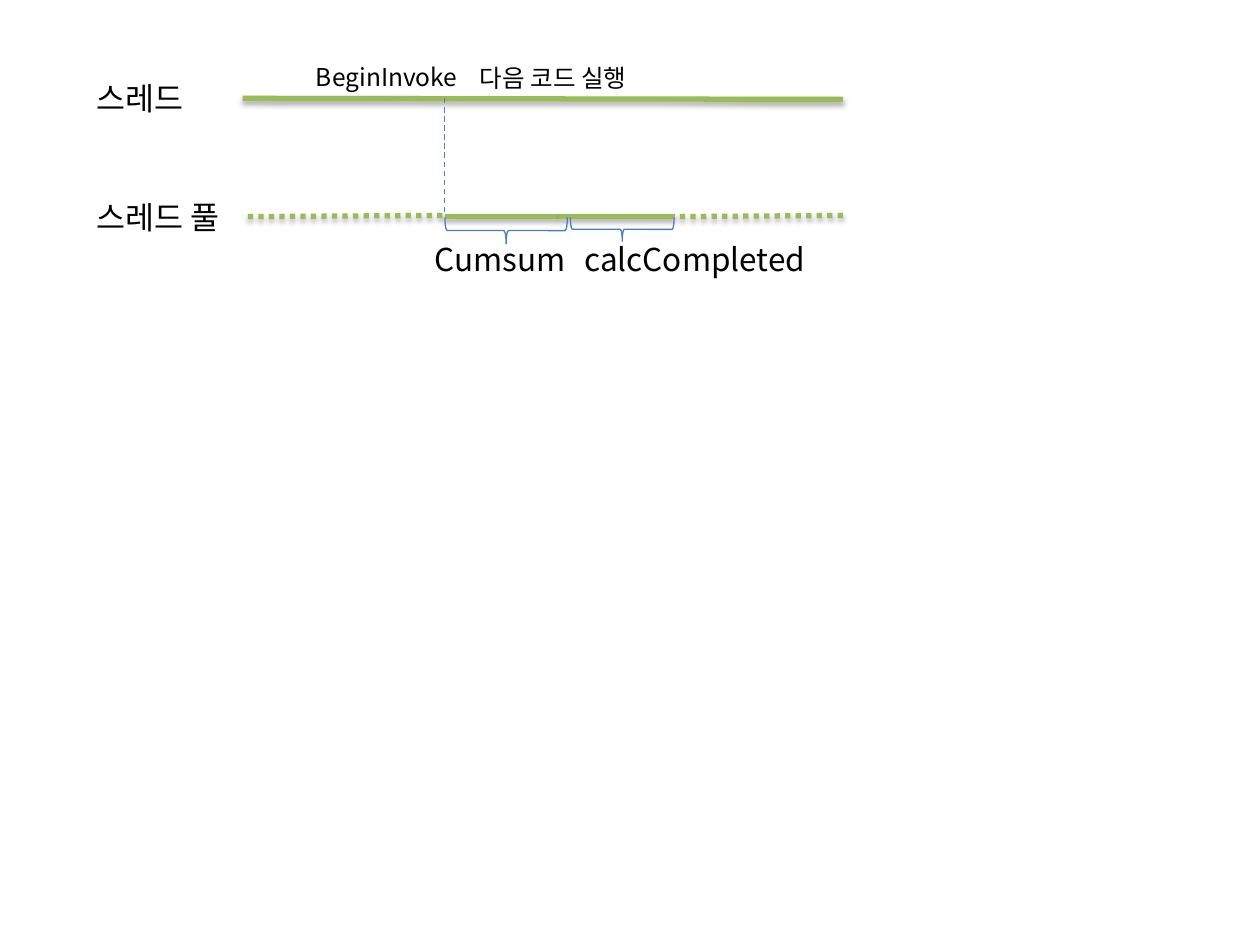
from lxml import etree
from pptx import Presentation
from pptx import util as u
from pptx.dml.color import RGBColor
from pptx.enum import dml, shapes, text
from pptx.oxml.ns import qn

Pt = u.Pt
FONT = "Noto Sans CJK KR"
COLORS = {"text": "000000", "thread": "9BBB59", "call": "4B7EBC", "shadow": "000000"}
SHADOW = {"blurRad": Pt(3.15), "dist": Pt(1.8), "dir": 90 * 60000, "rotWithShape": 0}

# Shared positions of the timeline
LEFT, CALL, SWITCH, DONE, RIGHT = 138.6, 254.2, 319.7, 385.9, 481.7
THREAD_Y, POOL_Y = 56.2, 123.8
LABEL_X = 48.2


def color(key):
    return RGBColor.from_string(COLORS[key])


def set_all(target, values):
    for name, value in values.items():
        setattr(target, name, value)


def add_label(slide, words, left, top, width, size):
    height = 29.1 if size == 18 else 24.2
    box = slide.shapes.add_textbox(Pt(left), Pt(top), Pt(width), Pt(height))
    frame = box.text_frame
    set_all(frame, {"word_wrap": True, "auto_size": text.MSO_AUTO_SIZE.SHAPE_TO_FIT_TEXT})
    run = frame.paragraphs[0].add_run()
    run.text = words
    set_all(run.font, {"size": Pt(size), "name": FONT})
    run.font.color.rgb = color("text")
    etree.SubElement(run.font._element, qn("a:ea"), typeface=FONT)


def add_line(slide, start, end, key, width, dash=None, shadow=False):
    line = slide.shapes.add_connector(
        shapes.MSO_CONNECTOR.STRAIGHT, *(Pt(v) for v in (*start, *end)))
    line.line.color.rgb = color(key)
    set_all(line.line, {"width": Pt(width), "dash_style": dash})
    effects = etree.SubElement(line._element.spPr, qn("a:effectLst"))
    if shadow:
        outer = etree.SubElement(effects, qn("a:outerShdw"),
                                 {name: str(int(value)) for name, value in SHADOW.items()})
        tint = etree.SubElement(outer, qn("a:srgbClr"), val=COLORS["shadow"])
        etree.SubElement(tint, qn("a:alpha"), val="35000")


def add_brace(slide, left, right, top, depth):
    """Brace opening upward; its frame is laid out before a quarter turn."""
    span = right - left
    brace = slide.shapes.add_shape(
        shapes.MSO_SHAPE.RIGHT_BRACE,
        Pt((left + right - depth) / 2), Pt(top + (depth - span) / 2), Pt(depth), Pt(span))
    brace.rotation = 90
    brace.shadow.inherit = False
    brace.fill.background()
    brace.line.color.rgb = color("call")
    brace.line.width = Pt(0.75)


def main():
    prs = Presentation()
    set_all(prs, {"slide_width": Pt(720), "slide_height": Pt(540)})
    slide = prs.slides.add_slide(prs.slide_layouts[6])

    # Thread and thread pool timelines
    dots = dml.MSO_LINE.ROUND_DOT
    for start, end, dash in (
        ((RIGHT, THREAD_Y + 0.6), (LEFT, THREAD_Y), None),
        ((CALL - 1.4, POOL_Y - 0.7), (LEFT, POOL_Y), dots),
        ((SWITCH, POOL_Y), (CALL, POOL_Y), None),
        ((RIGHT, POOL_Y - 0.7), (DONE, POOL_Y), dots),
        ((DONE, POOL_Y), (SWITCH, POOL_Y), None),
    ):
        add_line(slide, start, end, "thread", 3, dash, shadow=True)

    # Work done in the pool, and the call that starts it
    add_brace(slide, CALL, 324.2, 124.2, 15.1)
    add_brace(slide, 325.9, 385.2, 124.2, 13.7)
    add_line(slide, (CALL, THREAD_Y), (CALL, POOL_Y - 0.7), "call", 0.75, dml.MSO_LINE.DASH)

    # Labels
    for label in (
        ("스레드", LABEL_X, 41.8, 108, 18),
        ("스레드 풀", LABEL_X, 109.4, 108, 18),
        ("BeginInvoke", 173.5, 31.9, 108, 14),
        ("다음 코드 실행", 267.1, 32.2, 164.2, 14),
        ("Cumsum", 241.2, 133.4, 157.7, 18),
        ("calcCompleted", 326.9, 133.4, 157.7, 18),
    ):
        add_label(slide, *label)

    prs.save("out.pptx")


if __name__ == "__main__":
    main()
